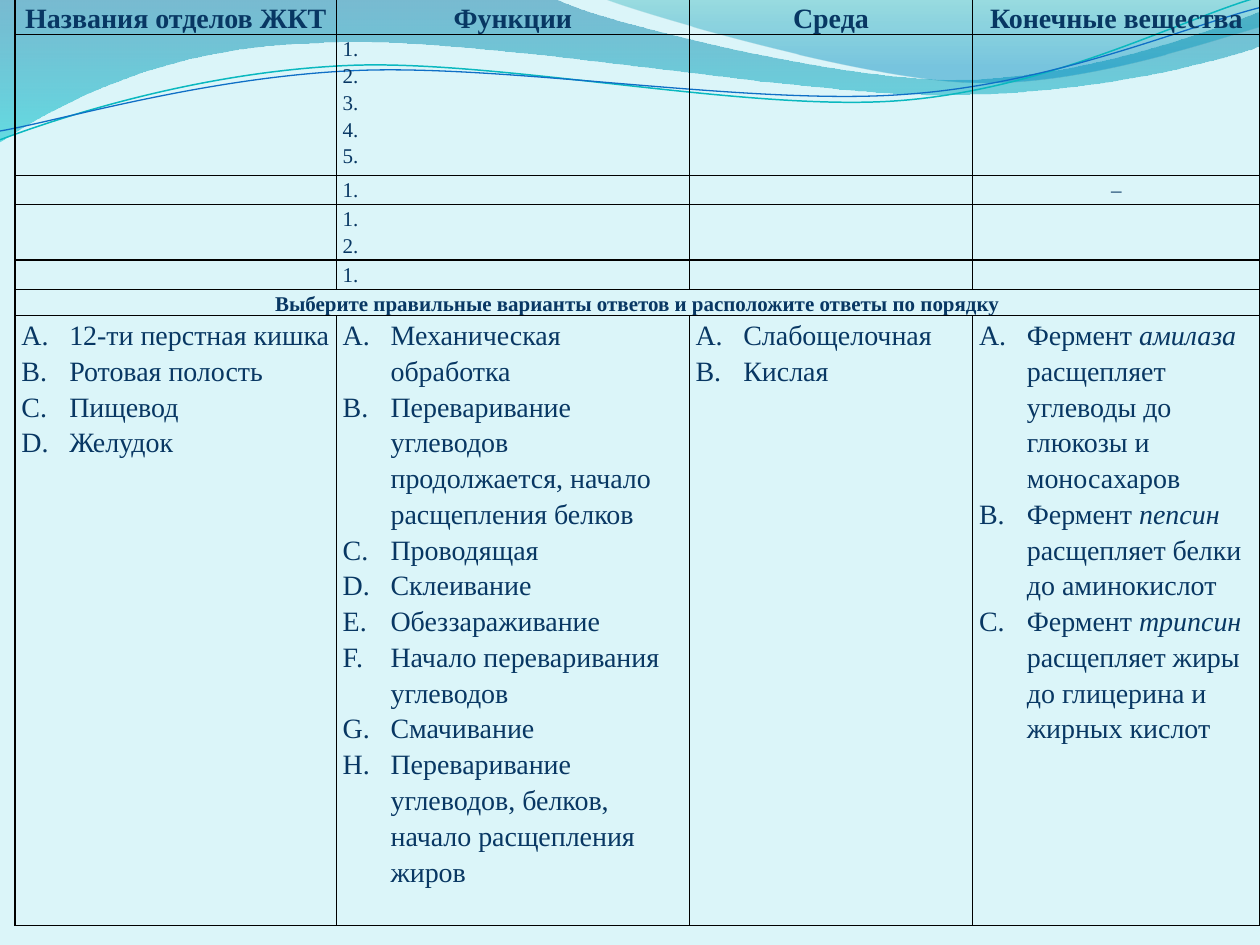
from dataclasses import dataclass

from lxml.etree import SubElement
from pptx import Presentation
from pptx.dml.color import RGBColor
from pptx.enum.text import PP_ALIGN
from pptx.oxml.ns import qn
from pptx.util import Inches, Pt


@dataclass(frozen=True)
class Theme:
    font: str = "Times New Roman"
    large: int = 16
    small: int = 12
    text: str = "083763"
    background: str = "DBF5F9"
    border: str = "000000"
    thick: float = 1
    thin: float = 0.5
    # Gradient stops: position, colour, opacity in percent
    back_wave: tuple = ((0, "0074A1", 45), (1, "00C6CF", 55))
    front_wave: tuple = ((0, "00A1A9", 30), (0.8, "008BBF", 45))
    teal_line: tuple = ("0AB8BF", 0.85)
    blue_line: tuple = ("0F6FC6", 0.75)


@dataclass(frozen=True)
class Box:
    left: float
    top: float
    width: float
    height: float


THEME = Theme()

# Outlines: a start point, then straight (2 numbers) or Bezier (6 numbers) pieces
BACK_WAVE = [
    (0, 0), (4.4, -0.01), (4.76, 0.17, 6.64, 0.63, 7.58, 0.63),
    (8.53, 0.63, 9.58, 0.26, 10, 0.09), (10.01, 0.36),
    (9.83, 0.44, 8.7, 0.76, 7.46, 0.75), (6.22, 0.75, 3.82, 0.28, 2.57, 0.34),
    (1.29, 0.36, 0.46, 0.83, -0.01, 1.13), (0, 0),
]
FRONT_WAVE = [
    (4.79, -0.01), (5.09, 0.11, 6.82, 0.62, 7.69, 0.65),
    (8.56, 0.69, 9.61, 0.32, 10, 0.21), (10, 0), (4.79, -0.01),
]
TEAL_STRAND = [
    (0, 1.11), (0.48, 0.93, 1.58, 0.57, 2.77, 0.52),
    (3.95, 0.47, 5.93, 0.89, 7.13, 0.8), (8.33, 0.71, 9.38, 0.15, 9.98, -0.02),
]
BLUE_STRAND = [
    (0, 1.04), (0.47, 0.96, 1.64, 0.61, 2.83, 0.56),
    (4.03, 0.51, 5.97, 0.84, 7.17, 0.75), (8.36, 0.67, 9.41, 0.21, 10, 0.06),
]

COLUMN_WIDTHS = [2.55, 2.8, 2.25, 2.28]
ROW_HEIGHTS = [0.18, 1.12, 0.23, 0.44, 0.23, 0.21, 4.84]
THICK_ROW_EDGES = {0, 1, 4, len(ROW_HEIGHTS)}
HEADERS = ["Названия отделов ЖКТ", "Функции", "Среда", "Конечные вещества"]
FUNCTION_COUNTS = [5, 1, 2, 1]
TASK_ROW = 5
TASK = "Выберите правильные варианты ответов и расположите ответы по порядку"
# Each answer is a list of runs; every second run is italic
ANSWERS = [
    [["12-ти перстная кишка"], ["Ротовая полость"], ["Пищевод"], ["Желудок"]],
    [["Механическая обработка"],
     ["Переваривание углеводов продолжается, начало расщепления белков"],
     ["Проводящая"], ["Склеивание"], ["Обеззараживание"],
     ["Начало переваривания углеводов"], ["Смачивание"],
     ["Переваривание углеводов, белков, начало расщепления жиров"]],
    [["Слабощелочная"], ["Кислая"]],
    [["Фермент ", "амилаза", " расщепляет углеводы до глюкозы и моносахаров"],
     ["Фермент ", "пепсин", " расщепляет белки до аминокислот"],
     ["Фермент ", "трипсин ", "расщепляет жиры до глицерина и жирных кислот"]],
]


def rgb(value):
    return RGBColor.from_string(value)


def add_outline(slide, box, outline, close):
    def place(x, y):
        return Inches(box.left + x), Inches(box.top + y)

    ends = [place(*piece[-2:]) for piece in outline]
    builder = slide.shapes.build_freeform(*ends[0])
    builder.add_line_segments(ends[1:], close=close)
    shape = builder.convert_to_shape()
    shape.shadow.inherit = False
    # Bend the straight pieces that have control points
    segments = list(shape._element.spPr.iter(qn("a:lnTo")))
    for segment, piece in zip(segments, outline[1:]):
        if len(piece) == 2:
            continue
        curve = SubElement(segment.getparent(), qn("a:cubicBezTo"))
        for x, y in zip(piece[::2], piece[1::2]):
            left, top = place(x, y)
            SubElement(curve, qn("a:pt"), x=str(left - shape.left), y=str(top - shape.top))
        segment.getparent().replace(segment, curve)
    return shape


def add_waves(slide, box):
    # Translucent gradient waves
    for outline, stops in ((BACK_WAVE, THEME.back_wave), (FRONT_WAVE, THEME.front_wave)):
        wave = add_outline(slide, box, outline, True)
        wave.line.fill.background()
        wave.fill.gradient()
        wave.fill.gradient_angle = 270
        for stop, (position, color, _) in zip(wave.fill.gradient_stops, stops):
            stop.position = position
            stop.color.rgb = rgb(color)
        for node, (_, _, opacity) in zip(wave._element.spPr.iter(qn("a:srgbClr")), stops):
            SubElement(node, qn("a:alpha"), val=str(opacity * 1000))
    # Thin strands
    for outline, (color, width) in ((TEAL_STRAND, THEME.teal_line),
                                    (BLUE_STRAND, THEME.blue_line)):
        strand = add_outline(slide, box, outline, False)
        strand.fill.background()
        strand.line.color.rgb = rgb(color)
        strand.line.width = Pt(width)


def set_borders(cell, row, column):
    last = len(COLUMN_WIDTHS)
    right = last if (row, column) == (TASK_ROW, 0) else column + 1
    for side, edge, edges in (("L", column, {0, last}), ("R", right, {0, last}),
                              ("T", row, THICK_ROW_EDGES), ("B", row + 1, THICK_ROW_EDGES)):
        if row == TASK_ROW and side in "LR" and edge not in edges:
            continue
        width = THEME.thick if edge in edges else THEME.thin
        line = SubElement(cell._tc.get_or_add_tcPr(), qn(f"a:ln{side}"), w=str(Pt(width)))
        SubElement(SubElement(line, qn("a:solidFill")), qn("a:srgbClr"), val=THEME.border)


def write_cell(cell, paragraphs, size, bold=False, centered=False, lettered=False):
    frame = cell.text_frame
    for index, runs in enumerate(paragraphs):
        paragraph = frame.add_paragraph() if index else frame.paragraphs[0]
        paragraph.line_spacing = 1.15
        if centered:
            paragraph.alignment = PP_ALIGN.CENTER
        if lettered:
            properties = paragraph._p.get_or_add_pPr()
            properties.set("marL", str(Inches(0.38)))
            properties.set("indent", str(-Inches(0.38)))
            SubElement(properties, qn("a:buFont"), typeface="+mj-lt")
            SubElement(properties, qn("a:buAutoNum"), type="alphaUcPeriod")
        for position, words in enumerate(runs):
            run = paragraph.add_run()
            run.text = words
            run.font.name = THEME.font
            run.font.size = Pt(size)
            run.font.bold = bold
            run.font.italic = position % 2 == 1
            run.font.color.rgb = rgb(THEME.text)


def add_digestion_table(slide, box):
    table = slide.shapes.add_table(
        len(ROW_HEIGHTS), len(COLUMN_WIDTHS), Inches(box.left), Inches(box.top),
        Inches(box.width), Inches(box.height)).table
    table.first_row = table.horz_banding = False
    for column, width in zip(table.columns, COLUMN_WIDTHS):
        column.width = Inches(width)
    for row, height in enumerate(ROW_HEIGHTS):
        table.rows[row].height = Inches(height)
        for column in range(len(COLUMN_WIDTHS)):
            cell = table.cell(row, column)
            cell.margin_left = cell.margin_right = Inches(0.05)
            cell.margin_top = cell.margin_bottom = 0
            set_borders(cell, row, column)
            cell.fill.background()
            # Empty cells keep the small type size, so rows stay low
            SubElement(cell.text_frame.paragraphs[0]._p, qn("a:endParaRPr"),
                       sz=str(THEME.small * 100))
    # Headings and answer choices
    for column, (header, answers) in enumerate(zip(HEADERS, ANSWERS)):
        write_cell(table.cell(0, column), [[header]], THEME.large, bold=True, centered=True)
        write_cell(table.cell(TASK_ROW + 1, column), answers, THEME.large, lettered=True)
    # Numbered lines to fill in
    for row, count in enumerate(FUNCTION_COUNTS, 1):
        write_cell(table.cell(row, 1), [[f"{n}."] for n in range(1, count + 1)], THEME.small)
    write_cell(table.cell(2, 3), [["–"]], THEME.small, centered=True)
    # Task line across the table
    task = table.cell(TASK_ROW, 0)
    task.merge(table.cell(TASK_ROW, len(COLUMN_WIDTHS) - 1))
    write_cell(task, [[TASK]], THEME.small, bold=True, centered=True)


def main():
    deck = Presentation()
    deck.slide_width, deck.slide_height = Inches(10), Inches(7.5)
    slide = deck.slides.add_slide(deck.slide_layouts[6])
    slide.background.fill.solid()
    slide.background.fill.fore_color.rgb = rgb(THEME.background)
    add_waves(slide, Box(0, 0, 10, 1.13))
    add_digestion_table(slide, Box(0.12, -0.01, sum(COLUMN_WIDTHS), 7.51))
    deck.save("out.pptx")


if __name__ == "__main__":
    main()
